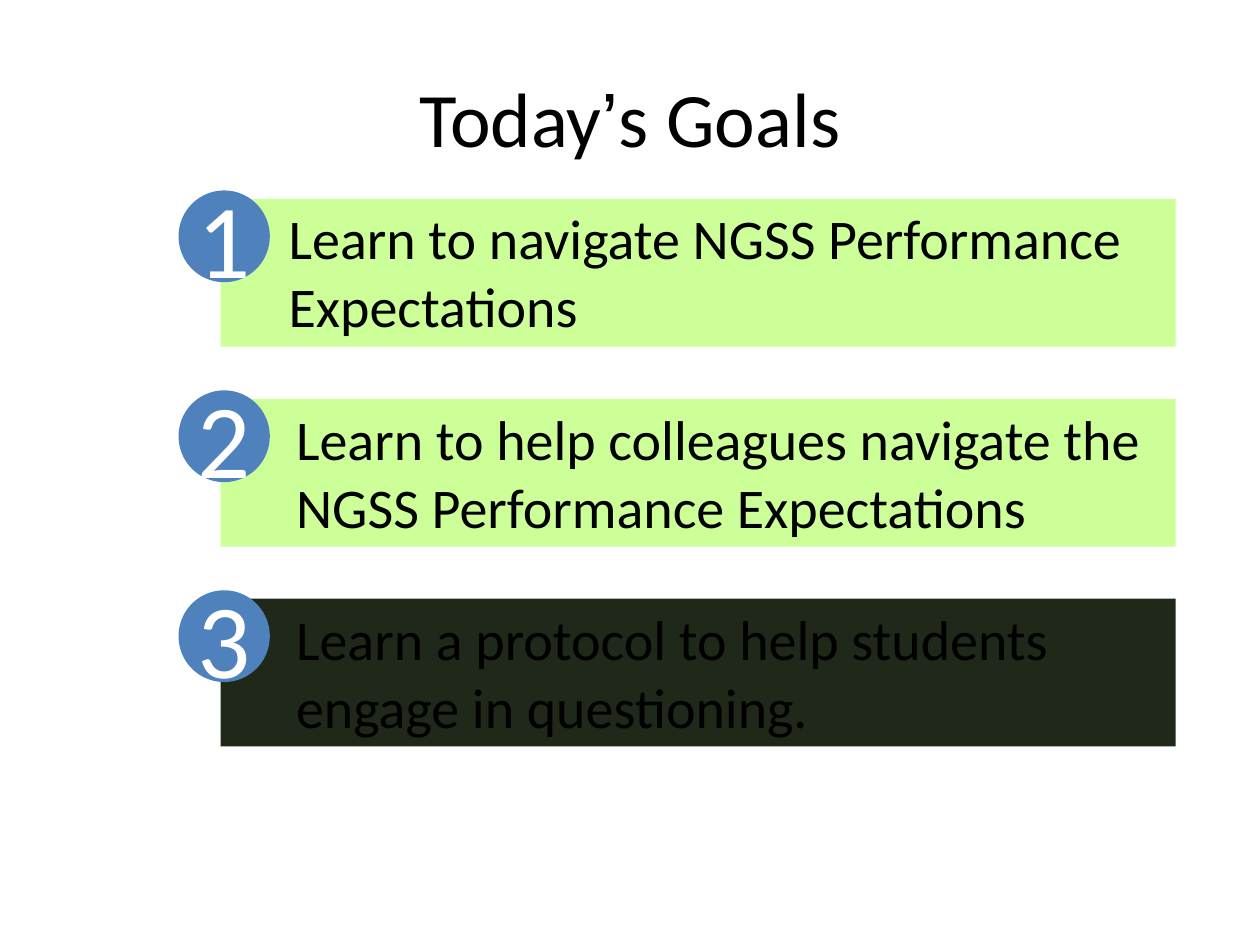
from dataclasses import dataclass

from pptx import Presentation
from pptx.dml.color import RGBColor
from pptx.enum.shapes import MSO_SHAPE
from pptx.enum.text import MSO_ANCHOR, PP_ALIGN
from pptx.util import Cm, Pt

RECT, OVAL = MSO_SHAPE.RECTANGLE, MSO_SHAPE.OVAL
TOP, MIDDLE = MSO_ANCHOR.TOP, MSO_ANCHOR.MIDDLE
LEFT, CENTER = PP_ALIGN.LEFT, PP_ALIGN.CENTER


@dataclass(frozen=True)
class Theme:
    """Colours, fonts and type sizes of the slide."""
    text: str = "000000"
    number: str = "FFFFFF"
    badge: str = "4F81BD"
    active: str = "CDFF99"
    dimmed: str = "1F2819"
    font: str = "Calibri"
    quote_font: str = "Arial"
    title_size: int = 44
    goal_size: int = 32
    number_size: int = 60


THEME = Theme()
TITLE = ("Today", "’", "s Goals")
GOALS = (
    ("Learn to navigate NGSS Performance Expectations", THEME.active, 0.1),
    ("Learn to help colleagues navigate the NGSS Performance Expectations",
     THEME.active, 0.25),
    ("Learn a protocol to help students engage in questioning.",
     THEME.dimmed, 0.25),
)
FIRST_TOP, PITCH = 4.01, 4.03


def set_frame(tf, anchor, side=0.1, edge=0.1):
    """Set wrapping, anchor and margins of a text frame."""
    tf.word_wrap = True
    tf.vertical_anchor = anchor
    tf.margin_left = tf.margin_right = Cm(side)
    tf.margin_top = tf.margin_bottom = Cm(edge)


def style(p, size, color, align):
    """Format a paragraph and all its runs."""
    p.alignment = align
    for r in p.runs:
        r.font.name = THEME.font
        r.font.size = Pt(size)
        r.font.color.rgb = RGBColor.from_string(color)


def add_block(shapes, kind, box, color):
    """Add a plain filled shape without outline or shadow."""
    sp = shapes.add_shape(kind, *map(Cm, box))
    sp.shadow.inherit = False
    sp.fill.solid()
    sp.fill.fore_color.rgb = RGBColor.from_string(color)
    sp.line.fill.background()
    return sp


def add_title(s):
    """Place the title, with its apostrophe in a second font."""
    sp = s.shapes.title
    sp.left, sp.top, sp.width, sp.height = map(Cm, (1.27, 0.76, 22.86, 3.18))
    tf = sp.text_frame
    set_frame(tf, MIDDLE)
    p = tf.paragraphs[0]
    for part in TITLE:
        p.add_run().text = part
    style(p, THEME.title_size, THEME.text, CENTER)
    p.runs[1].font.name = THEME.quote_font


def add_goal(s, top, text, color, side):
    """Add one goal bar with indented text."""
    sp = add_block(s.shapes, RECT, (4.45, top, 19.25, 2.98), color)
    tf = sp.text_frame
    set_frame(tf, TOP, side, side / 2 if side > 0.1 else side)
    p = tf.paragraphs[0]
    p.text = text
    pPr = p._p.get_or_add_pPr()
    pPr.set("marL", str(Cm(1.27)))
    pPr.set("indent", "0")
    style(p, THEME.goal_size, THEME.text, LEFT)


def add_badge(s, top, number):
    """Add a grouped circle and number at the corner of a bar."""
    shapes = s.shapes.add_group_shape().shapes
    add_block(shapes, OVAL, (3.6, top - 0.17, 1.84, 1.85), THEME.badge)
    tb = shapes.add_textbox(*map(Cm, (3.87, top - 0.83, 1.3, 3.18)))
    tf = tb.text_frame
    set_frame(tf, MIDDLE)
    tf.text = str(number)
    style(tf.paragraphs[0], THEME.number_size, THEME.number, CENTER)


def main():
    """Build and save the slide."""
    prs = Presentation()
    prs.slide_width, prs.slide_height = Cm(25.4), Cm(19.05)
    s = prs.slides.add_slide(prs.slide_layouts[5])
    add_title(s)
    for i, (text, color, side) in enumerate(GOALS):
        top = FIRST_TOP + i * PITCH
        add_goal(s, top, text, color, side)
        add_badge(s, top, i + 1)
    prs.save("out.pptx")


if __name__ == "__main__":
    main()
